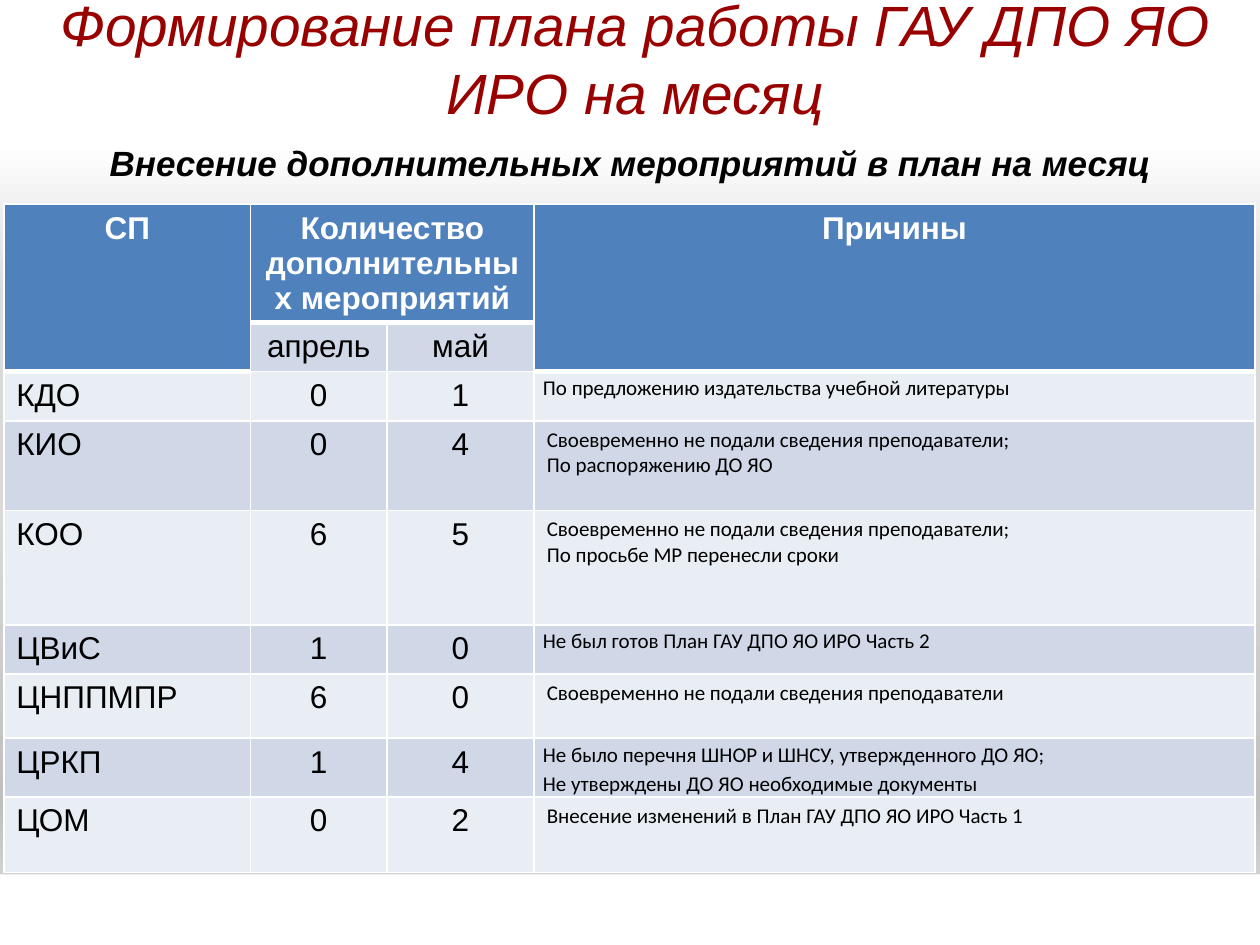
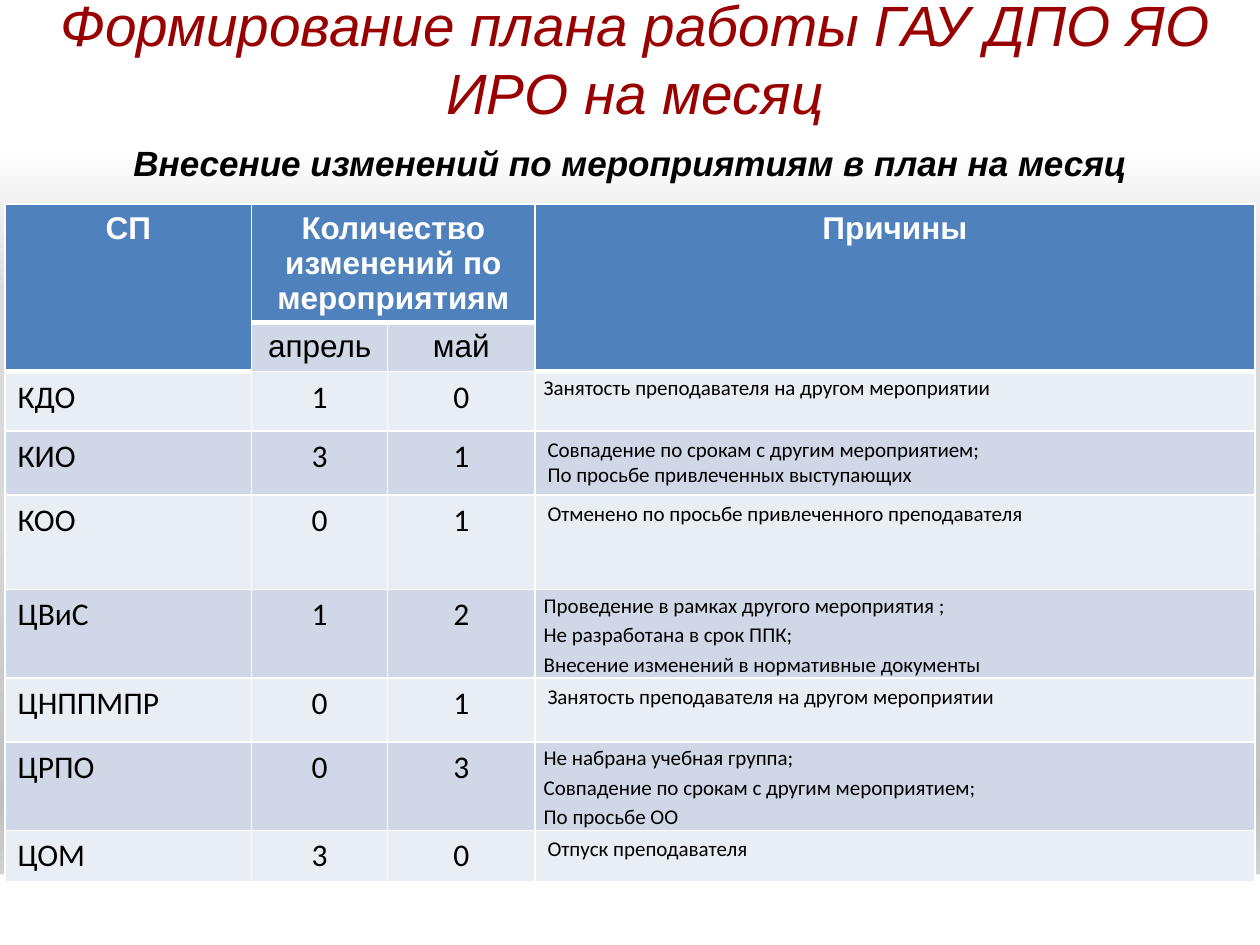
from itertools import product
from lxml.etree import SubElement
from pptx import Presentation
from pptx.dml.color import RGBColor
from pptx.enum.shapes import MSO_SHAPE
from pptx.enum.text import MSO_ANCHOR, MSO_AUTO_SIZE, PP_ALIGN
from pptx.oxml.ns import qn
from pptx.util import Emu, Inches, Pt

WIDTH, HEIGHT = Inches(10), Inches(7.5)
WHITE, BLACK, DARK_RED = "FFFFFF", "000000", "990000"
HEADER_BLUE, BANDS = "4F81BD", ("E9EDF4", "D0D8E8")
BACKGROUND = ((0, "FFFFFF"), (15, "FFFFFF"), (32, "D9D9D9"),
              (54, "D9D9D9"), (85, "BFBFBF"), (100, "E6E6E6"))

# Boxes: left, top, width, height in percent of the slide
TITLE_BOX = (0.4, 0, 100, 12.27)
SUBTITLE_BOX = (2.8, 14.27, 94.5, 77.73)
FOOTER_BOX = (0, 92.53, 100.1, 7.73)

PLAN_TITLE = "Формирование плана работы ГАУ ДПО ЯО ИРО на месяц"
COLUMN_WEIGHTS = (1.96, 1.08, 1.17, 5.72)
HEADER_ROWS = 2
TIGHT_ROWS = (0, 3, 5)  # departments whose reasons are set without vertical margins

# Department, April, May, reasons
ADDITIONS = [
    ("КДО", 0, 1, ["По предложению издательства учебной литературы"]),
    ("КИО", 0, 4, ["Своевременно не подали сведения преподаватели;",
                   "По распоряжению ДО ЯО"]),
    ("КОО", 6, 5, ["Своевременно не подали сведения преподаватели;",
                   "По просьбе МР перенесли сроки"]),
    ("ЦВиС", 1, 0, ["Не был готов План ГАУ ДПО ЯО ИРО Часть 2"]),
    ("ЦНППМПР", 6, 0, ["Своевременно не подали сведения преподаватели"]),
    ("ЦРКП", 1, 4, ["Не было перечня ШНОР и ШНСУ, утвержденного ДО ЯО;",
                    "Не утверждены ДО ЯО необходимые документы"]),
    ("ЦОМ", 0, 2, ["Внесение изменений в План ГАУ ДПО ЯО ИРО Часть 1"]),
]
CHANGES = [
    ("КДО", 1, 0, ["Занятость преподавателя на другом мероприятии"]),
    ("КИО", 3, 1, ["Совпадение по срокам с другим мероприятием;",
                   "По просьбе привлеченных выступающих"]),
    ("КОО", 0, 1, ["Отменено по просьбе привлеченного преподавателя"]),
    ("ЦВиС", 1, 2, ["Проведение в рамках другого мероприятия ;",
                    "Не разработана в срок ППК;",
                    "Внесение изменений в нормативные документы"]),
    ("ЦНППМПР", 0, 1, ["Занятость преподавателя на другом мероприятии"]),
    ("ЦРПО", 0, 3, ["Не набрана учебная группа;",
                    "Совпадение по срокам с другим мероприятием;",
                    "По просьбе ОО"]),
    ("ЦОМ", 3, 0, ["Отпуск преподавателя"]),
]


def color(value):
    return RGBColor.from_string(value)


def paint(target, value):
    target.fill.solid()
    target.fill.fore_color.rgb = color(value)


def place(box):
    """Turn a box in percent of the slide into lengths."""
    sides = (WIDTH, HEIGHT, WIDTH, HEIGHT)
    return [Emu(round(share * side / 100)) for share, side in zip(box, sides)]


def move(shape, box):
    shape.left, shape.top, shape.width, shape.height = place(box)


def split(total, weights):
    return [Emu(round(total * weight / sum(weights))) for weight in weights]


def style(paragraph, size, font="Arial", ink=BLACK, bold=False, italic=False, align=None):
    paragraph.alignment = align
    for run in paragraph.runs:
        run.font.size, run.font.name = Pt(size), font
        run.font.bold, run.font.italic = bold, italic
        run.font.color.rgb = color(ink)


def add_line(parent, tag, points, value, index):
    """Insert a solid line element into cell or run properties."""
    line = SubElement(parent, qn(tag), w=str(Pt(points)))
    fill = SubElement(line, qn("a:solidFill"))
    SubElement(fill, qn("a:srgbClr"), val=value)
    parent.insert(index, line)


# Shared background and footer band
def set_background(master):
    fill = master.background.fill
    fill.gradient()
    fill.gradient_angle = 270
    stops = master.element.find(".//" + qn("a:gsLst"))
    for stop in list(stops):
        stops.remove(stop)
    for position, value in BACKGROUND:
        stop = SubElement(stops, qn("a:gs"), pos=str(position * 1000))
        SubElement(stop, qn("a:srgbClr"), val=value)


def add_footer_band(slide):
    """Draw the band and move it to the layout, behind its placeholders."""
    band = slide.shapes.add_shape(MSO_SHAPE.RECTANGLE, *place(FOOTER_BOX))
    band.shadow.inherit = False
    paint(band, WHITE)
    band.line.fill.background()
    band.element.find(".//" + qn("p:cNvPr")).set("id", "20")
    slide.slide_layout.shapes.element.insert(2, band.element)


# Title and subtitle
def fill_title(title):
    move(title, TITLE_BOX)
    paint(title, WHITE)
    frame = title.text_frame
    frame.text = PLAN_TITLE
    frame.auto_size = MSO_AUTO_SIZE.NONE
    frame.vertical_anchor = MSO_ANCHOR.MIDDLE
    heading = frame.paragraphs[0]
    style(heading, 32.4, ink=DARK_RED, italic=True, align=PP_ALIGN.CENTER)
    run_properties = heading.runs[0].font.fill._xPr
    add_line(run_properties, "a:ln", 0.75, DARK_RED, 0)


def fill_subtitle(body, subtitle):
    move(body, SUBTITLE_BOX)
    frame = body.text_frame
    frame.text = subtitle
    frame.auto_size = MSO_AUTO_SIZE.NONE
    line = frame.paragraphs[0]
    properties = line._p.get_or_add_pPr()
    properties.set("marL", "0")
    properties.set("indent", "0")
    SubElement(properties, qn("a:buNone"))
    line.space_before = Pt(0)
    style(line, 20, bold=True, italic=True, align=PP_ALIGN.CENTER)


# Table
def write(cell, text, **look):
    cell.text_frame.text = text
    for paragraph in cell.text_frame.paragraphs:
        style(paragraph, **look)


def fill_reasons(cell, reasons, tight):
    write(cell, "\n".join(reasons), size=12, font="Calibri")
    if tight:
        cell.margin_left = cell.margin_right = Inches(0.07)
        cell.margin_top = cell.margin_bottom = 0
        for paragraph in cell.text_frame.paragraphs:
            paragraph.line_spacing = 1.15


def color_cells(table):
    """Blue header, alternating bands, white grid with a thick line under the header."""
    for row, column in product(range(len(table.rows)), range(len(COLUMN_WEIGHTS))):
        cell = table.cell(row, column)
        header = row == 0 or (row == 1 and column in (0, 3))
        paint(cell, HEADER_BLUE if header else BANDS[row % 2])
        sides = (("a:lnL", 1), ("a:lnR", 1), ("a:lnT", 1), ("a:lnB", 3 if header else 1))
        for index, (side, points) in enumerate(sides):
            add_line(cell._tc.get_or_add_tcPr(), side, points, WHITE, index)


def add_plan_table(slide, box, row_weights, count_heading, departments, font):
    left, top, width, height = place(box)
    table = slide.shapes.add_table(len(row_weights), len(COLUMN_WEIGHTS),
                                   left, top, width, height).table
    table.first_row = table.horz_banding = False
    for column, size in zip(table.columns, split(width, COLUMN_WEIGHTS)):
        column.width = size
    for row, size in zip(table.rows, split(height, row_weights)):
        row.height = size
    color_cells(table)

    # Two-level header
    table.cell(0, 0).merge(table.cell(1, 0))
    table.cell(0, 1).merge(table.cell(0, 2))
    table.cell(0, 3).merge(table.cell(1, 3))
    for column, heading in ((0, "СП"), (1, count_heading), (3, "Причины")):
        write(table.cell(0, column), heading, size=18, ink=WHITE, bold=True,
              align=PP_ALIGN.CENTER)
    for column, month in enumerate(("апрель", "май"), 1):
        write(table.cell(1, column), month, size=18, align=PP_ALIGN.CENTER)

    # One row for each department
    for number, (department, april, may, reasons) in enumerate(departments):
        row = number + HEADER_ROWS
        write(table.cell(row, 0), department, size=18, font=font)
        for column, count in enumerate((april, may), 1):
            write(table.cell(row, column), str(count), size=18, font=font,
                  align=PP_ALIGN.CENTER)
        fill_reasons(table.cell(row, 3), reasons, number in TIGHT_ROWS)


def add_plan_slide(deck, subtitle, **plan):
    slide = deck.slides.add_slide(deck.slide_layouts[1])
    fill_title(slide.shapes.title)
    fill_subtitle(slide.placeholders[1], subtitle)
    add_plan_table(slide, **plan)
    return slide


def main():
    deck = Presentation()
    deck.slide_width, deck.slide_height = WIDTH, HEIGHT
    set_background(deck.slide_master)
    additions = add_plan_slide(
        deck, "Внесение дополнительных мероприятий в план на месяц",
        box=(0.3, 21.6, 99.3, 70.53),
        row_weights=(0.93, 0.39, 0.39, 0.71, 0.91, 0.39, 0.51, 0.46, 0.6),
        count_heading="Количество дополнительных мероприятий",
        departments=ADDITIONS, font="Arial")
    add_footer_band(additions)
    add_plan_slide(
        deck, "Внесение изменений по мероприятиям в план на месяц",
        box=(0.4, 21.6, 99.2, 71.47),
        row_weights=(0.93, 0.39, 0.47, 0.51, 0.75, 0.7, 0.51, 0.7, 0.4),
        count_heading="Количество изменений по мероприятиям",
        departments=CHANGES, font="Calibri")
    deck.save("out.pptx")


if __name__ == "__main__":
    main()
